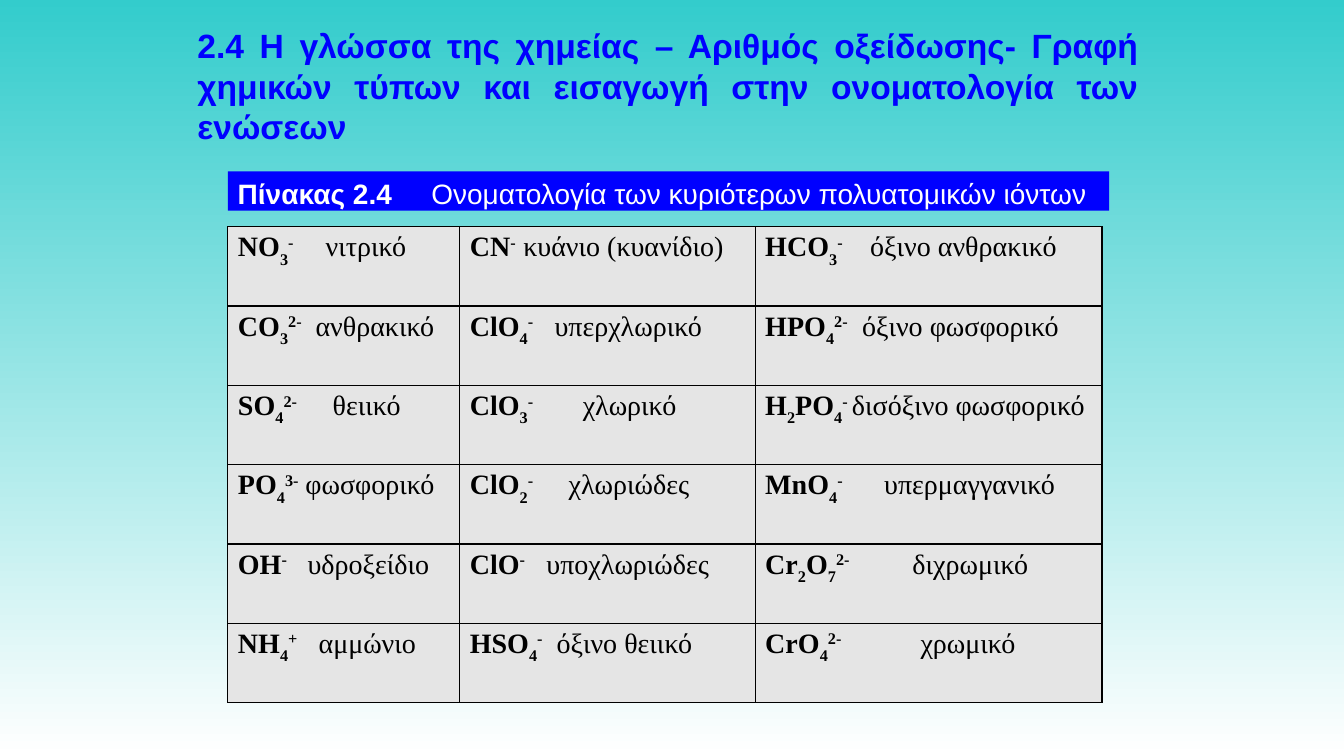
from dataclasses import dataclass

from lxml.etree import SubElement
from pptx import Presentation
from pptx.dml.color import RGBColor as RGB
from pptx.enum.shapes import MSO_SHAPE as SHAPE
from pptx.enum.text import MSO_ANCHOR as ANCHOR, PP_ALIGN as ALIGN
from pptx.oxml.ns import qn
from pptx.util import Inches, Pt


@dataclass(frozen=True)
class Theme:
    teal: RGB = RGB.from_string("33CCCC")
    white: RGB = RGB.from_string("FFFFFF")
    blue: RGB = RGB.from_string("0000FF")
    black: RGB = RGB.from_string("000000")
    grey: RGB = RGB.from_string("E5E5E5")
    heading: str = "Arial"
    body: str = "Times New Roman"
    title_size: int = 24
    text_size: int = 20
    border: int = 1


IONS = [
    [("NO|_3|^-", "νιτρικό", 0.87),
     ("CN|^-", "κυάνιο (κυανίδιο)", 0.53),
     ("HCO|_3|^-", "όξινο ανθρακικό", 1.04)],
    [("CO|_3|^2-", "ανθρακικό", 0.77),
     ("ClO|_4|^-", "υπερχλωρικό", 0.84),
     ("HPO|_4|^2-", "όξινο φωσφορικό", 0.96)],
    [("SO|_4|^2-", "θειικό", 0.94),
     ("ClO|_3|^-", "χλωρικό", 1.12),
     ("H|_2|PO|_4|^-", "δισόξινο φωσφορικό", 0.86)],
    [("PO|_4|^3-", "φωσφορικό", 0.67),
     ("ClO|_2|^-", "χλωριώδες", 0.98),
     ("MnO|_4|^-", "υπερμαγγανικό", 1.18)],
    [("OH|^-", "υδροξείδιο", 0.69),
     ("ClO|^-", "υποχλωριώδες", 0.76),
     ("Cr|_2|O|_7|^2-", "διχρωμικό", 1.46)],
    [("NH|_4|^+", "αμμώνιο", 0.8),
     ("HSO|_4|^-", "όξινο θειικό", 0.86),
     ("CrO|_4|^2-", "χρωμικό", 1.54)],
]
BASELINES = {"_": "-30000", "^": "30000"}


class SlideBuilder:
    def __init__(self, prs, theme):
        self.theme = theme
        self.s = prs.slides.add_slide(prs.slide_layouts[6])

    def background(self):
        fill = self.s.background.fill
        fill.gradient()
        fill.gradient_angle = 270
        colors = (self.theme.teal, self.theme.white)
        for stop, position, color in zip(fill.gradient_stops, (0, 1), colors):
            stop.position = position
            stop.color.rgb = color

    def run(self, p, text, color, **style):
        r = p.add_run()
        r.text = text
        r.font.color.rgb = color
        for name, value in style.items():
            setattr(r.font, name, value)
        return r

    def tab_stop(self, p, inches):
        tabs = SubElement(p._p.get_or_add_pPr(), qn("a:tabLst"))
        SubElement(tabs, qn("a:tab"), pos=str(Inches(inches)), algn="l")

    def title(self, text, *box):
        tf = self.s.shapes.add_textbox(*map(Inches, box)).text_frame
        for name, value in {"word_wrap": True, "vertical_anchor": ANCHOR.MIDDLE}.items():
            setattr(tf, name, value)
        p = tf.paragraphs[0]
        p.alignment = ALIGN.JUSTIFY
        self.run(p, text, self.theme.blue, name=self.theme.heading,
                 size=Pt(self.theme.title_size), bold=True)

    def caption(self, label, text, tab, *box):
        sp = self.s.shapes.add_shape(SHAPE.RECTANGLE, *map(Inches, box))
        sp.shadow.inherit = False
        sp.fill.solid()
        sp.fill.fore_color.rgb = self.theme.blue
        sp.line.fill.background()
        tf = sp.text_frame
        tf.vertical_anchor = ANCHOR.TOP
        p = tf.paragraphs[0]
        p.alignment = ALIGN.LEFT
        self.tab_stop(p, tab)
        style = {"name": self.theme.heading, "size": Pt(self.theme.text_size)}
        self.run(p, label, self.theme.white, bold=True, **style)
        self.run(p, "\t" + text, self.theme.white, bold=False, **style)

    def ion_table(self, rows, widths, *box):
        shape = self.s.shapes.add_table(len(rows), len(widths), *map(Inches, box))
        table = shape.table
        table.first_row = table.horz_banding = False
        for column, width in zip(table.columns, widths):
            column.width = Inches(width)
        for i, row in enumerate(rows):
            for j, ion in enumerate(row):
                align = ALIGN.LEFT if j == len(widths) - 1 else ALIGN.JUSTIFY
                self.ion_cell(table.cell(i, j), align, *ion)

    def ion_cell(self, cell, align, formula, ion_name, tab):
        self.borders(cell)
        cell.fill.solid()
        cell.fill.fore_color.rgb = self.theme.grey
        p = cell.text_frame.paragraphs[0]
        p.alignment = align
        self.tab_stop(p, tab)
        style = {"name": self.theme.body, "size": Pt(self.theme.text_size)}
        for part in formula.split("|"):
            r = self.run(p, part.lstrip("_^"), self.theme.black, bold=True, **style)
            if part[0] in BASELINES:
                r._r.get_or_add_rPr().set("baseline", BASELINES[part[0]])
        self.run(p, "\t" + ion_name, self.theme.black, bold=False, **style)

    def borders(self, cell):
        props = cell._tc.get_or_add_tcPr()
        for side in ("lnL", "lnR", "lnT", "lnB"):
            line = SubElement(props, qn(f"a:{side}"), w=str(Pt(self.theme.border)))
            fill = SubElement(line, qn("a:solidFill"))
            SubElement(fill, qn("a:srgbClr"), val=str(self.theme.black))


def main():
    prs = Presentation()
    prs.slide_width, prs.slide_height = Inches(13.33), Inches(7.5)
    slide = SlideBuilder(prs, Theme())
    slide.background()
    slide.title("2.4 Η γλώσσα της χημείας – Αριθμός οξείδωσης- Γραφή χημικών τύπων "
                "και εισαγωγή στην ονοματολογία των ενώσεων", 1.86, 0.16, 9.53, 1.38)
    slide.ion_table(IONS, (2.3, 2.93, 3.44), 2.26, 2.25, 8.67, 4.72)
    slide.caption("Πίνακας 2.4", "Ονοματολογία των κυριότερων πολυατομικών ιόντων",
                  1.92, 2.26, 1.7, 8.74, 0.39)
    prs.save("out.pptx")


if __name__ == "__main__":
    main()
